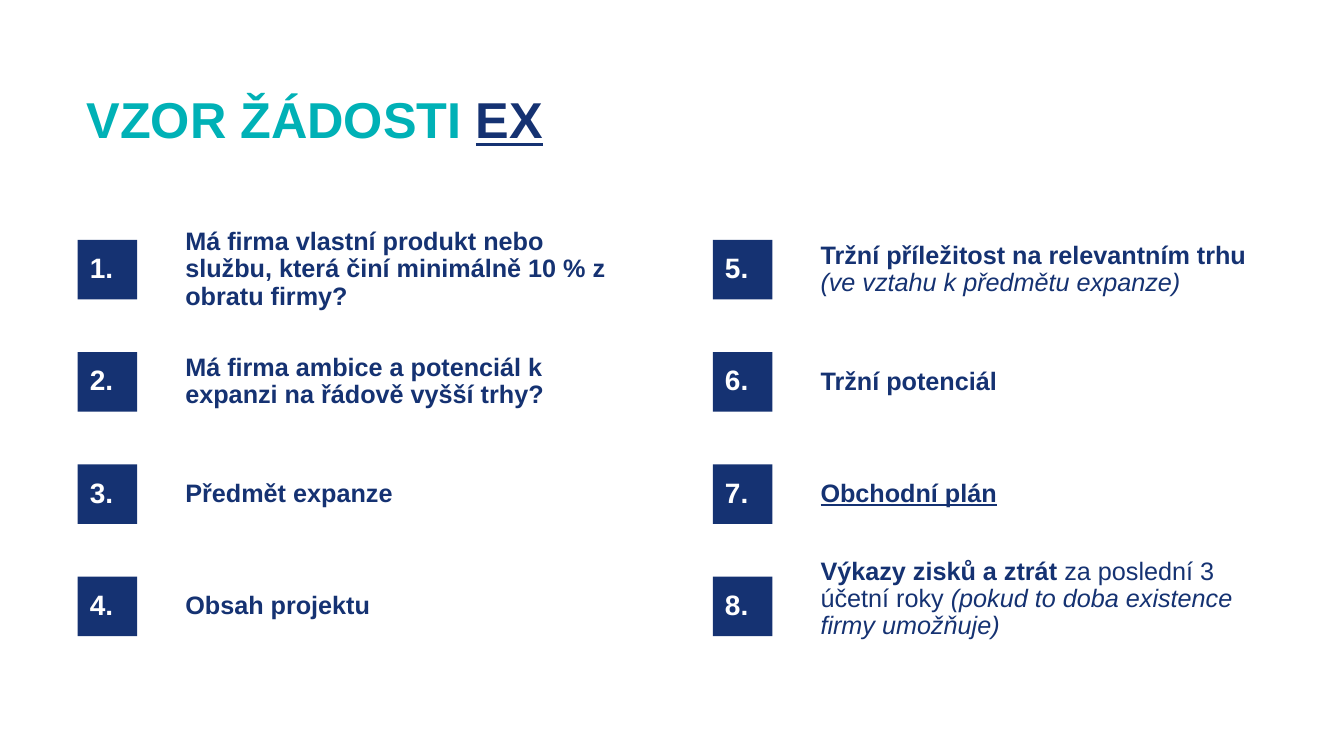
from pptx import Presentation
from pptx.dml.color import RGBColor
from pptx.enum.shapes import MSO_SHAPE
from pptx.enum.text import MSO_ANCHOR, PP_ALIGN
from pptx.util import Inches, Pt

RECTANGLE = MSO_SHAPE.RECTANGLE
MIDDLE = MSO_ANCHOR.MIDDLE
LEFT = PP_ALIGN.LEFT

NAVY, TEAL, WHITE = "153272", "00B1B6", "FFFFFF"

# Grid of numbered questions
ROWS = 4
LEFT_EDGE, TOP_EDGE = 0.77, 2.38
COLUMN_STEP, ROW_STEP = 6.3, 3.34 / 3
SQUARE = 0.59
TEXT_DX, TEXT_W, TEXT_H = 0.97, 4.53, 0.79

BOLD = {"bold": True}
ITALIC = {"italic": True}
LINKED = {"bold": True, "underline": True}

QUESTIONS = [
    [("Má firma vlastní produkt nebo službu, která činí minimálně 10 % z obratu firmy?", BOLD)],
    [("Má firma ambice a potenciál k expanzi na řádově vyšší trhy?", BOLD)],
    [("Předmět expanze", BOLD)],
    [("Obsah projektu", BOLD)],
    [("Tržní příležitost na relevantním trhu ", BOLD),
     ("(ve vztahu k předmětu expanze)", ITALIC)],
    [("Tržní potenciál", BOLD)],
    [("Obchodní plán", LINKED)],
    [("Výkazy zisků a ztrát ", BOLD), ("za poslední 3 účetní roky ", {}),
     ("(pokud to doba existence firmy umožňuje)", ITALIC)],
]


def color(value):
    return RGBColor.from_string(value)


class SlideBuilder:
    font = "Arial"

    def __init__(self, prs):
        self.s = prs.slides.add_slide(prs.slide_layouts[6])

    def add_runs(self, sp, runs, size, fill, inset=0.1, margin_y=0.05):
        tf = sp.text_frame
        frame = {"word_wrap": True, "vertical_anchor": MIDDLE,
                 "margin_left": Inches(inset), "margin_right": Inches(0.1),
                 "margin_top": Inches(margin_y), "margin_bottom": Inches(margin_y)}
        for name, value in frame.items():
            setattr(tf, name, value)
        p = tf.paragraphs[0]
        p.alignment = LEFT
        p.line_spacing = 0.9
        for text, style in runs:
            r = p.add_run()
            r.text = text
            style = {"name": self.font, "size": Pt(size), "color": fill, **style}
            r.font.color.rgb = color(style.pop("color"))
            for name, value in style.items():
                setattr(r.font, name, value)

    def text(self, x, y, w, h, runs, size, fill=NAVY):
        sp = self.s.shapes.add_textbox(Inches(x), Inches(y), Inches(w), Inches(h))
        self.add_runs(sp, runs, size, fill)

    def number(self, x, y, label):
        sp = self.s.shapes.add_shape(RECTANGLE, Inches(x), Inches(y),
                                     Inches(SQUARE), Inches(SQUARE))
        sp.shadow.inherit = False
        sp.fill.solid()
        sp.fill.fore_color.rgb = color(NAVY)
        sp.line.fill.background()
        self.add_runs(sp, [(label, BOLD)], 20, WHITE, inset=0.12, margin_y=0)


def main():
    prs = Presentation()
    prs.slide_width, prs.slide_height = Inches(13.33), Inches(7.5)
    slide = SlideBuilder(prs)

    # Title
    slide.text(0.76, 0.82, 11.81, 0.79,
               [("VZOR ŽÁDOSTI ", {**BOLD, "color": TEAL}), ("EX", LINKED)], 36)

    # Numbered questions, filled column by column
    for i, runs in enumerate(QUESTIONS):
        column, row = divmod(i, ROWS)
        x = LEFT_EDGE + column * COLUMN_STEP
        y = TOP_EDGE + row * ROW_STEP
        slide.number(x, y, f"{i + 1}.")
        # The last answer sits slightly higher than its row
        lift = 0.17 if i == len(QUESTIONS) - 1 else 0.1
        slide.text(x + TEXT_DX, y - lift, TEXT_W, TEXT_H, runs, 18)

    prs.save("out.pptx")


if __name__ == "__main__":
    main()
